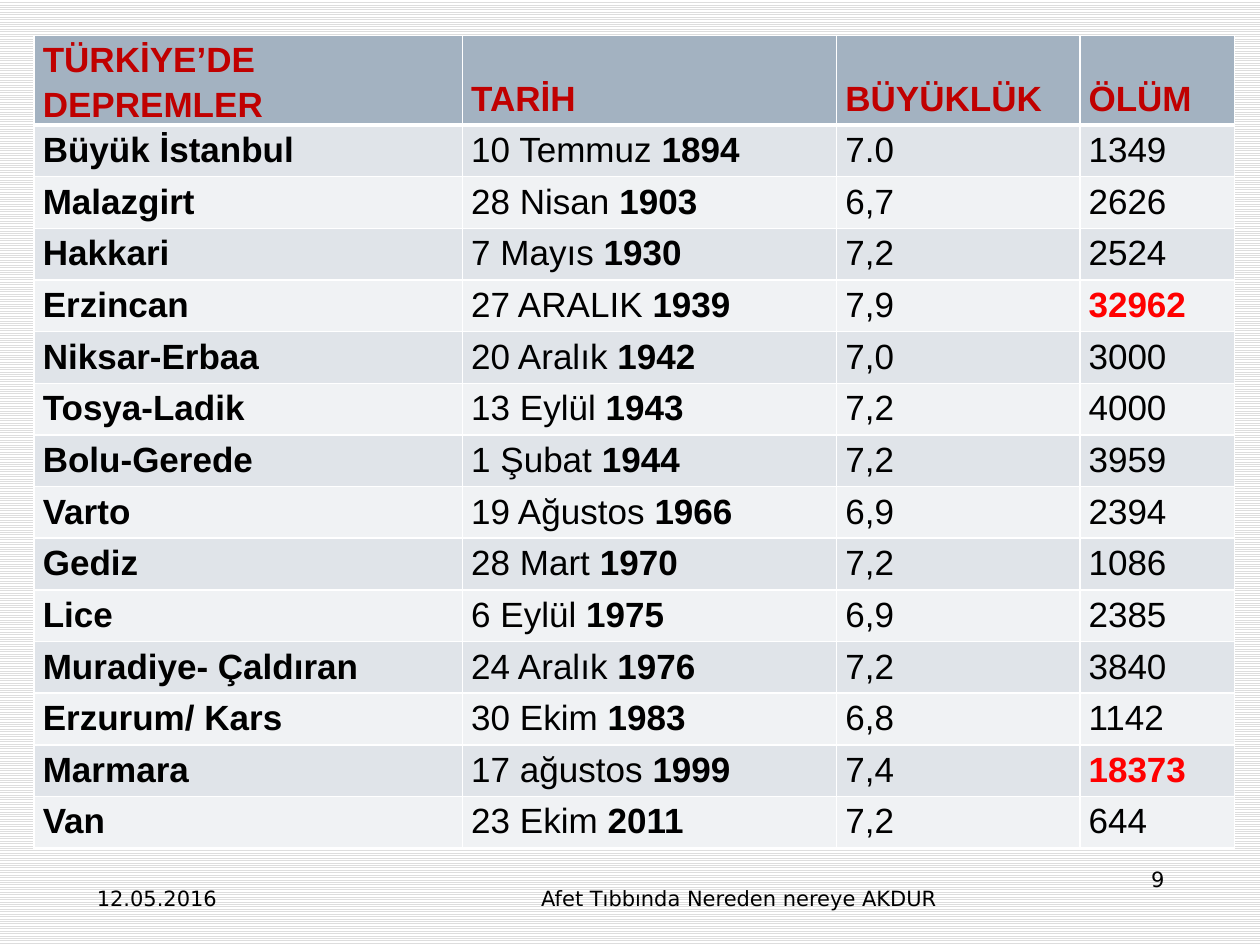
from typing import NamedTuple

from lxml import etree
from pptx import Presentation
from pptx import util as u
from pptx.dml.color import RGBColor
from pptx.enum import dml, text
from pptx.oxml import ns

SLIDE_WIDTH, SLIDE_HEIGHT = 10, 7.5
TABLE_LEFT, TABLE_TOP = 0.27, 0.28
COLUMN_WIDTHS = (3.4, 2.97, 1.93, 1.23)
HEADER_HEIGHT, ROW_HEIGHT = 0.7, 0.41
HEADER_FILL, ROW_FILLS = "A3B2C1", ("E0E4E9", "F0F2F4")
BLACK, WHITE, DARK_RED, RED = "000000", "FFFFFF", "C00000", "FF0000"
DEADLY = 10000


class Earthquake(NamedTuple):
    place: str
    day: str
    year: str
    magnitude: str
    deaths: int


class FooterItem(NamedTuple):
    """Footer text with its box in inches."""
    content: str
    left: float
    top: float
    width: float
    height: float
    alignment: text.PP_ALIGN


class TextRun(NamedTuple):
    content: str
    bold: bool = False
    color: str = BLACK
    size: float = 20
    font: str = "Arial"


HEADERS = ("TÜRKİYE’DE DEPREMLER", "TARİH", "BÜYÜKLÜK", "ÖLÜM")
EARTHQUAKES = (
    Earthquake("Büyük İstanbul", "10 Temmuz", "1894", "7.0", 1349),
    Earthquake("Malazgirt", "28 Nisan", "1903", "6,7", 2626),
    Earthquake("Hakkari", "7 Mayıs", "1930", "7,2", 2524),
    Earthquake("Erzincan", "27 ARALIK", "1939", "7,9", 32962),
    Earthquake("Niksar-Erbaa", "20 Aralık", "1942", "7,0", 3000),
    Earthquake("Tosya-Ladik", "13 Eylül", "1943", "7,2", 4000),
    Earthquake("Bolu-Gerede", "1 Şubat", "1944", "7,2", 3959),
    Earthquake("Varto", "19 Ağustos", "1966", "6,9", 2394),
    Earthquake("Gediz", "28 Mart", "1970", "7,2", 1086),
    Earthquake("Lice", "6 Eylül", "1975", "6,9", 2385),
    Earthquake("Muradiye- Çaldıran", "24 Aralık", "1976", "7,2", 3840),
    Earthquake("Erzurum/ Kars", "30 Ekim", "1983", "6,8", 1142),
    Earthquake("Marmara", "17 ağustos", "1999", "7,4", 18373),
    Earthquake("Van", "23 Ekim", "2011", "7,2", 644),
)
FOOTER = (
    FooterItem("12.05.2016", 0.67, 6.98, 2.17, 0.37, text.PP_ALIGN.LEFT),
    FooterItem("9", 7.17, 6.83, 2.17, 0.52, text.PP_ALIGN.RIGHT),
    FooterItem("Afet Tıbbında Nereden nereye AKDUR", 3.42, 6.98, 4.89, 0.37,
               text.PP_ALIGN.CENTER),
)


def rgb(value: str) -> RGBColor:
    return RGBColor.from_string(value)


def add_run(paragraph, item: TextRun) -> None:
    run = paragraph.add_run()
    run.text = item.content
    run.font.name = item.font
    run.font.size = u.Pt(item.size)
    run.font.bold = item.bold
    run.font.color.rgb = rgb(item.color)


def add_borders(cell, top: float = 1, bottom: float = 1) -> None:
    """Draw white cell borders; widths are in points."""
    properties = cell._tc.get_or_add_tcPr()
    for side, width in (("L", 1), ("R", 1), ("T", top), ("B", bottom)):
        line = etree.SubElement(properties, ns.qn(f"a:ln{side}"), w=str(u.Pt(width)))
        fill = etree.SubElement(line, ns.qn("a:solidFill"))
        etree.SubElement(fill, ns.qn("a:srgbClr"), val=WHITE)


def fill_cell(cell, runs: list[TextRun], fill: str) -> None:
    cell.margin_left = cell.margin_right = u.Inches(0.07)
    cell.margin_top = cell.margin_bottom = 0
    cell.fill.solid()
    cell.fill.fore_color.rgb = rgb(fill)
    paragraph = cell.text_frame.paragraphs[0]
    paragraph.line_spacing = 1.15
    for run in runs:
        add_run(paragraph, run)


def earthquake_runs(quake: Earthquake) -> list[list[TextRun]]:
    """Give the runs of each cell in an earthquake's row."""
    deadly = quake.deaths > DEADLY
    return [
        [TextRun(quake.place, bold=True)],
        [TextRun(quake.day + " "), TextRun(quake.year, bold=True)],
        [TextRun(quake.magnitude)],
        [TextRun(str(quake.deaths), deadly, RED if deadly else BLACK)],
    ]


def add_earthquake_table(slide) -> None:
    row_count = len(EARTHQUAKES) + 1
    height = HEADER_HEIGHT + ROW_HEIGHT * len(EARTHQUAKES)
    table = slide.shapes.add_table(
        row_count, len(HEADERS), u.Inches(TABLE_LEFT), u.Inches(TABLE_TOP),
        u.Inches(sum(COLUMN_WIDTHS)), u.Inches(height)).table
    for column, width in zip(table.columns, COLUMN_WIDTHS):
        column.width = u.Inches(width)
    for index, row in enumerate(table.rows):
        row.height = u.Inches(ROW_HEIGHT if index else HEADER_HEIGHT)

    for column, header in enumerate(HEADERS):
        cell = table.cell(0, column)
        add_borders(cell, bottom=3)
        fill_cell(cell, [TextRun(header, True, DARK_RED)], HEADER_FILL)
        if column:
            cell.vertical_anchor = text.MSO_ANCHOR.BOTTOM
            cell.margin_bottom = u.Inches(0.05)

    for index, quake in enumerate(EARTHQUAKES):
        for column, runs in enumerate(earthquake_runs(quake)):
            cell = table.cell(index + 1, column)
            add_borders(cell, top=1 if index else 3)
            fill_cell(cell, runs, ROW_FILLS[index % 2])


def add_footer_item(slide, item: FooterItem) -> None:
    box = slide.shapes.add_textbox(
        *(u.Inches(length) for length in (item.left, item.top, item.width, item.height)))
    box.text_frame.word_wrap = True
    paragraph = box.text_frame.paragraphs[0]
    paragraph.alignment = item.alignment
    add_run(paragraph, TextRun(item.content, size=12, font="DejaVu Sans"))


def set_striped_background(slide) -> None:
    fill = slide.background.fill
    fill.patterned()
    fill.pattern = dml.MSO_PATTERN.LIGHT_HORIZONTAL
    fill.fore_color.rgb = rgb("DDDDDD")
    fill.back_color.rgb = rgb(WHITE)


def main() -> None:
    presentation = Presentation()
    presentation.slide_width = u.Inches(SLIDE_WIDTH)
    presentation.slide_height = u.Inches(SLIDE_HEIGHT)
    slide = presentation.slides.add_slide(presentation.slide_layouts.get_by_name("Blank"))
    set_striped_background(slide)
    add_earthquake_table(slide)
    for item in FOOTER:
        add_footer_item(slide, item)
    presentation.save("out.pptx")


if __name__ == "__main__":
    main()
